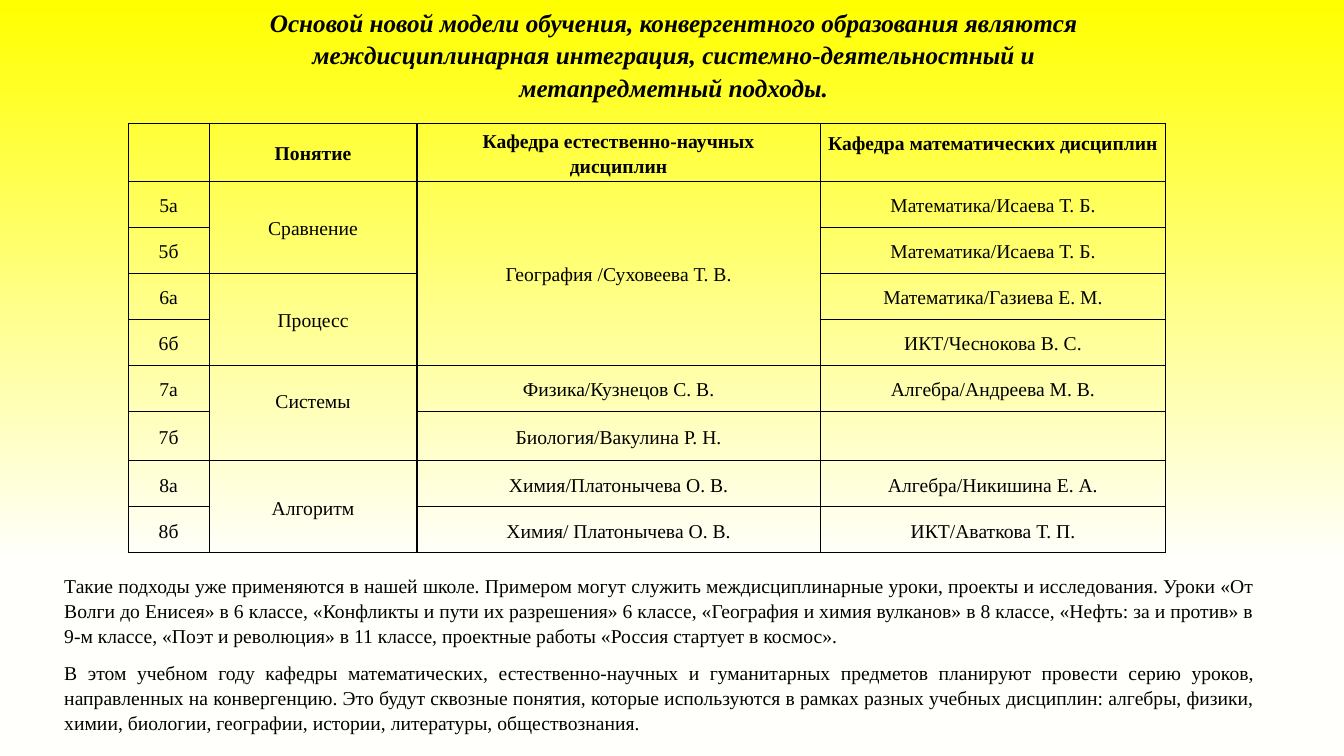
from lxml import etree
from pptx import Presentation
from pptx.dml.color import RGBColor
from pptx.enum.text import MSO_ANCHOR as Anchor, MSO_AUTO_SIZE as AutoSize, PP_ALIGN as Align
from pptx.oxml.ns import qn
from pptx.util import Cm, Pt

COLORS = {"ink": "000000", "yellow": "FFFF00", "cream": "FFFFFB", "white": "FFFFFD"}
FONT = "Times New Roman"


def write(frame, lines, size=14, bold=False, italic=False, align=Align.CENTER,
          spacing=1.07, after=8):
    for index, line in enumerate(lines):
        para = frame.paragraphs[0] if index == 0 else frame.add_paragraph()
        para.alignment = align
        para.line_spacing = spacing
        para.space_before, para.space_after = Pt(0), Pt(after)
        span = para.add_run()
        span.text = line
        span.font.name, span.font.size = FONT, Pt(size)
        span.font.bold, span.font.italic = bold, italic
        span.font.color.rgb = RGBColor.from_string(COLORS["ink"])


def add_borders(cell, width=1):
    properties = cell._tc.get_or_add_tcPr()
    for side in ("a:lnL", "a:lnR", "a:lnT", "a:lnB"):
        line = etree.SubElement(properties, qn(side), w=str(Pt(width)))
        fill = etree.SubElement(line, qn("a:solidFill"))
        etree.SubElement(fill, qn("a:srgbClr"), val=COLORS["ink"])


deck = Presentation()
deck.slide_width, deck.slide_height = Cm(33.87), Cm(19.05)
page = deck.slides.add_slide(deck.slide_layouts[5])

# Background: yellow fading downwards
backdrop = page.background.fill
backdrop.gradient()
backdrop.gradient_angle = 270
stops = page.element.find(".//" + qn("a:gsLst"))
for stop in list(stops):
    stops.remove(stop)
for percent, name in ((0, "yellow"), (74, "cream"), (83, "cream"), (100, "white")):
    stop = etree.SubElement(stops, qn("a:gs"), pos=str(percent * 1000))
    etree.SubElement(stop, qn("a:srgbClr"), val=COLORS[name])

# Title
title = page.shapes.title
title.left, title.top, title.width, title.height = Cm(6.02), Cm(0), Cm(21.92), Cm(2.72)
title.text_frame.word_wrap = True
title.text_frame.auto_size = AutoSize.NONE
title.text_frame.vertical_anchor = Anchor.TOP
write(title.text_frame, [
    "Основой новой модели обучения, конвергентного образования являются "
    "междисциплинарная интеграция, системно-деятельностный и метапредметный подходы.",
], size=18, bold=True, italic=True)

# Table of shared concepts; None marks a cell covered by the one above
ROWS = [
    ("", "Понятие", "Кафедра естественно-научных\nдисциплин", "Кафедра математических дисциплин"),
    ("5а", "Сравнение", "География /Суховеева Т. В.", "Математика/Исаева Т. Б."),
    ("5б", None, None, "Математика/Исаева Т. Б."),
    ("6а", "Процесс", None, "Математика/Газиева Е. М."),
    ("6б", None, None, "ИКТ/Чеснокова В. С."),
    ("7а", "Системы", "Физика/Кузнецов С. В.", "Алгебра/Андреева М. В."),
    ("7б", None, "Биология/Вакулина Р. Н.", ""),
    ("8а", "Алгоритм", "Химия/Платонычева О. В.", "Алгебра/Никишина Е. А."),
    ("8б", None, "Химия/ Платонычева О. В.", "ИКТ/Аваткова Т. П."),
]
COLUMN_WIDTHS = [2.04, 5.24, 10.16, 8.71]
ROW_HEIGHTS = [1.45] + [1.16] * 5 + [1.24] + [1.16] * 2

table = page.shapes.add_table(
    len(ROWS), len(COLUMN_WIDTHS), Cm(3.23), Cm(3.12),
    Cm(sum(COLUMN_WIDTHS)), Cm(sum(ROW_HEIGHTS))).table
table.first_row = table.horz_banding = False
for column, width in zip(table.columns, COLUMN_WIDTHS):
    column.width = Cm(width)
for row, height in zip(table.rows, ROW_HEIGHTS):
    row.height = Cm(height)

for row_index, row in enumerate(ROWS):
    for column_index, text in enumerate(row):
        cell = table.cell(row_index, column_index)
        cell.vertical_anchor = Anchor.MIDDLE
        cell.margin_left = cell.margin_right = Cm(0.18)
        cell.margin_top = cell.margin_bottom = Cm(0)
        add_borders(cell)
        cell.fill.background()
        if text:
            write(cell.text_frame, text.split("\n"), bold=row_index == 0, spacing=1.15, after=0)

for top in (1, 3, 5, 7):
    table.cell(top, 1).merge(table.cell(top + 1, 1))
table.cell(1, 2).merge(table.cell(4, 2))

# Two cells whose text sits above the middle
table.cell(0, 3).vertical_anchor = Anchor.TOP
table.cell(0, 3).margin_top = Cm(0.14)
table.cell(5, 1).margin_bottom = Cm(0.63)

# Explanation below the table
box = page.shapes.add_textbox(Cm(1.37), Cm(14.3), Cm(30.5), Cm(4.39))
box.text_frame.word_wrap = True
box.text_frame.auto_size = AutoSize.SHAPE_TO_FIT_TEXT
write(box.text_frame, [
    "Такие подходы уже применяются в нашей школе. Примером могут служить междисциплинарные "
    "уроки, проекты и исследования. Уроки «От Волги до Енисея» в 6 классе, «Конфликты и пути "
    "их разрешения» 6 классе, «География и химия вулканов» в 8 классе, «Нефть: за и против» "
    "в 9-м классе, «Поэт и революция» в 11 классе, проектные работы «Россия стартует в космос».",
    "В этом учебном году кафедры математических, естественно-научных и гуманитарных предметов "
    "планируют провести серию уроков, направленных на конвергенцию. Это будут сквозные понятия, "
    "которые используются в рамках разных учебных дисциплин: алгебры, физики, химии, биологии, "
    "географии, истории, литературы, обществознания.",
], align=Align.JUSTIFY)

deck.save("out.pptx")
